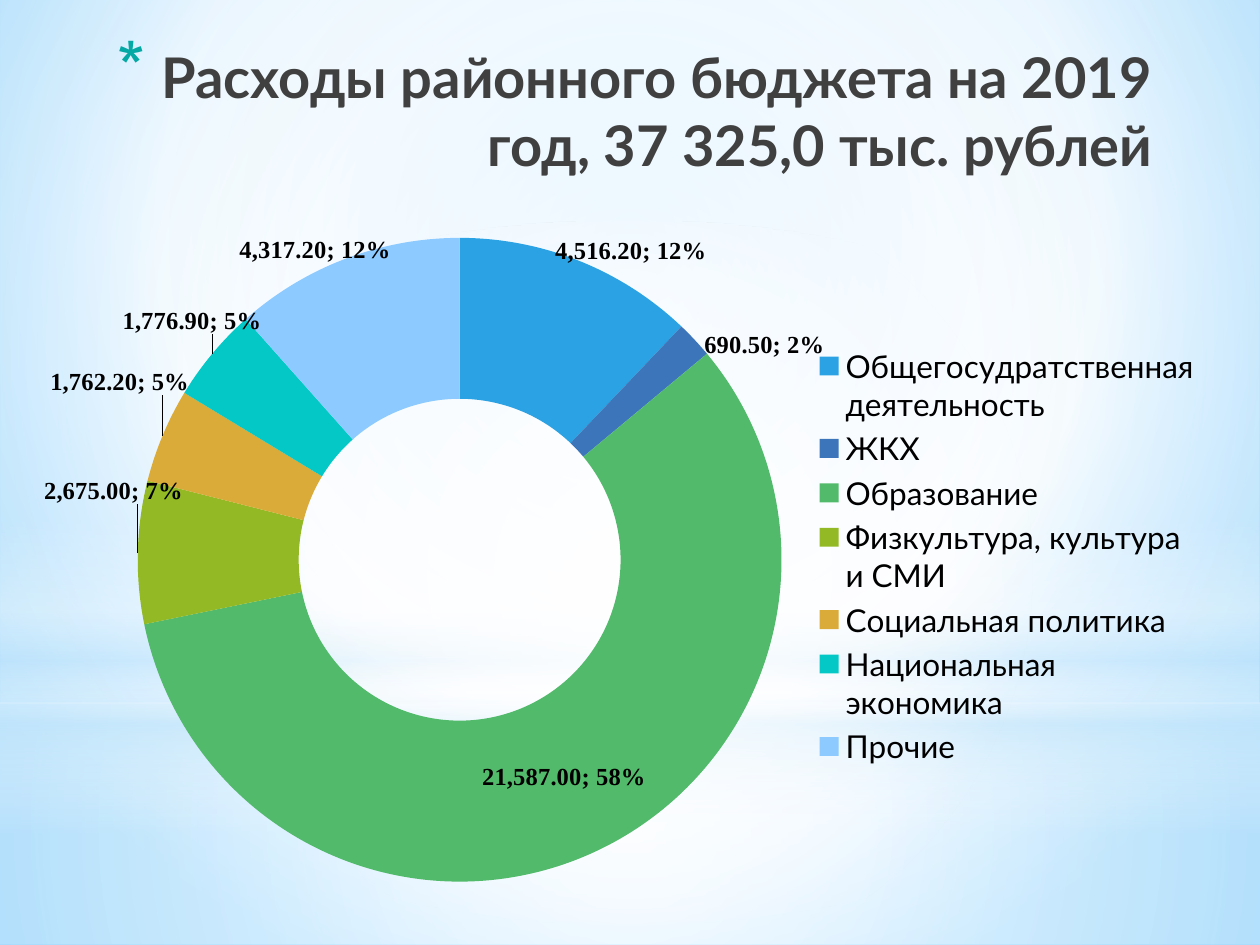
import copy
from dataclasses import dataclass

import pptx
import pptx.chart.data
import pptx.dml.color
import pptx.enum.chart
import pptx.enum.shapes
import pptx.enum.text
import pptx.oxml
import pptx.oxml.ns
import pptx.util
from pptx.util import Inches, Pt

MSO_SHAPE = pptx.enum.shapes.MSO_SHAPE
NS = {
    "a": "http://schemas.openxmlformats.org/drawingml/2006/main",
    "c": "http://schemas.openxmlformats.org/drawingml/2006/chart",
}
FONT, LABEL_FONT = "Lato", "Times New Roman"
CENTRE = (50, 50, 50, 50)


@dataclass
class Glow:
    """A background shape; stops are (position %, colour, opacity %)."""
    kind: int
    top: float
    height: float
    stops: list
    focus: tuple | None = CENTRE  # None gives a vertical linear gradient


@dataclass
class Expense:
    name: str
    value: float
    colour: str
    label_shift: tuple | None  # fractions of the chart's width and height


BACKGROUND = [(0, "B0E0FF", 100), (60, "FFFFFF", 100), (100, "6BC5FF", 100)]
GLOWS = [
    Glow(MSO_SHAPE.RECTANGLE, 5.58, 1.92,
         [(0, "FFFFFF", 91), (37, "FFFFFF", 76), (100, "C6E7FC", 79)]),
    Glow(MSO_SHAPE.RECTANGLE, 0, 5.58,
         [(0, "FFFFFF", 89), (48, "FFFFFF", 62), (100, "C6E7FC", 79)]),
    Glow(MSO_SHAPE.RECTANGLE, 4.12, 2.5,
         [(0, "FFFFFF", 0), (29, "FFFFFF", 30), (45, "C6E7FC", 40),
          (55, "FFFFFF", 26), (65, "C6E7FC", 60), (100, "FFFFFF", 0)], None),
    Glow(MSO_SHAPE.OVAL, 1.75, 5.58, [(0, "FFFFFF", 100), (56, "FFFFFF", 0)]),
]
EXPENSES = [
    Expense("Общегосудратственная деятельность", 4516.2, "2BA2E3", (0.07, -0.12)),
    Expense("ЖКХ", 690.5, "3D75BB", (0.11, -0.07)),
    Expense("Образование", 21587, "52BA6B", None),
    Expense("Физкультура, культура и СМИ", 2675, "93B924", (-0.09, -0.09)),
    Expense("Социальная политика", 1762.2, "DBAB39", (-0.1, -0.12)),
    Expense("Национальная экономика", 1776.9, "04C8C6", (-0.07, -0.12)),
    Expense("Прочие", 4317.2, "8CCAFF", (-0.05, -0.12)),
]


def rgb(colour: str):
    return pptx.dml.color.RGBColor.from_string(colour)


def xml(text: str):
    """Parse a fragment whose root tag is followed by a space."""
    uses = " ".join(f'xmlns:{k}="{v}"' for k, v in NS.items())
    return pptx.oxml.parse_xml(text.replace(" ", f" {uses} ", 1))


def set_gradient(fill, element, stops: list, focus: tuple | None) -> None:
    fill.solid()
    fill.fore_color.rgb = rgb("FFFFFF")
    gs = "".join(
        f'<a:gs pos="{pos * 1000}"><a:srgbClr val="{colour}">'
        f'<a:alpha val="{alpha * 1000}"/></a:srgbClr></a:gs>'
        for pos, colour, alpha in stops)
    if focus:
        sides = " ".join(f'{k}="{v * 1000}"' for k, v in zip("ltrb", focus))
        direction = f'<a:path path="circle"><a:fillToRect {sides}/></a:path>'
    else:
        direction = '<a:lin ang="5400000" scaled="0"/>'
    solid = element.find(".//a:solidFill", NS)
    solid.getparent().replace(solid, xml(
        f'<a:gradFill rotWithShape="1"><a:gsLst>{gs}</a:gsLst>{direction}</a:gradFill>'))


def add_glow(slide, glow: Glow) -> None:
    sp = slide.shapes.add_shape(
        glow.kind, 0, Inches(glow.top), Inches(10), Inches(glow.height))
    sp.shadow.inherit = False
    set_gradient(sp.fill, sp.element, glow.stops, glow.focus)
    sp.line.fill.background()


def format_title(title) -> None:
    title.left, title.top = Inches(0.67), Inches(0.29)
    title.width, title.height = Inches(8.58), Inches(1.25)
    tf = title.text_frame
    tf.text = "Расходы районного бюджета на 2019 год, 37 325,0 тыс. рублей"
    tf.word_wrap = True
    tf.auto_size = pptx.enum.text.MSO_AUTO_SIZE.NONE
    tf.vertical_anchor = pptx.enum.text.MSO_ANCHOR.TOP
    p = tf.paragraphs[0]
    p.alignment = pptx.enum.text.PP_ALIGN.RIGHT
    font = p.runs[0].font
    font.name, font.size, font.bold = FONT, Pt(32), True
    font.color.rgb = rgb("404040")
    pPr = p.runs[0]._r.getparent().get_or_add_pPr()
    pPr.set("marL", str(Inches(0.35)))
    pPr.set("indent", str(Inches(-0.35)))
    for part in ('<a:buClr ><a:srgbClr val="04A8A4"/></a:buClr>',
                 '<a:buSzPct val="128000"/>',
                 '<a:buFontTx />',
                 '<a:buChar char="*"/>'):
        pPr.append(xml(part))


def set_font(font, name: str, size: int, bold: bool = False) -> None:
    font.name, font.size, font.bold = name, Pt(size), bold
    font.color.rgb = rgb("000000")


def layout(x: float, y: float, extra: str = "", size: str = ""):
    return xml(f'<c:layout ><c:manualLayout>{extra}<c:x val="{x}"/>'
               f'<c:y val="{y}"/>{size}</c:manualLayout></c:layout>')


def shift_labels(dLbls) -> None:
    """Give moved labels their own offset and the shared label format."""
    shared = list(dLbls)
    moved = [(i, e.label_shift) for i, e in enumerate(EXPENSES) if e.label_shift]
    for place, (i, shift) in enumerate(moved):
        dLbl = xml(f'<c:dLbl ><c:idx val="{i}"/></c:dLbl>')
        dLbl.append(layout(*shift))
        for child in shared:
            if not child.tag.endswith("showLeaderLines"):
                dLbl.append(copy.deepcopy(child))
        dLbls.insert(place, dLbl)


def add_expense_chart(slide) -> None:
    data = pptx.chart.data.CategoryChartData(number_format="#,##0.00")
    data.categories = [e.name for e in EXPENSES]
    data.add_series("Series 1", [e.value for e in EXPENSES])
    chart = slide.shapes.add_chart(
        pptx.enum.chart.XL_CHART_TYPE.DOUGHNUT,
        Inches(0.35), Inches(1.62), Inches(9.29), Inches(5.59), data).chart
    chart.has_title = False
    set_font(chart.font, FONT, 18)
    chart.has_legend = True
    chart.legend.position = pptx.enum.chart.XL_LEGEND_POSITION.RIGHT
    chart.legend.include_in_layout = False
    set_font(chart.legend.font, FONT, 18)

    plot = chart.plots[0]
    plot.vary_by_categories = True
    series = plot.series[0]
    for i, expense in enumerate(EXPENSES):
        fill = series.points[i].format.fill
        fill.solid()
        fill.fore_color.rgb = rgb(expense.colour)

    labels = series.data_labels
    labels.show_value = labels.show_percentage = True
    set_font(labels.font, LABEL_FONT, 14, True)
    root = chart.element
    dLbls = root.find(".//c:ser/c:dLbls", NS)
    # Without a label format, values follow the data and shares stay percentages
    for tag in ("numFmt", "separator", "showBubbleSize"):
        for old in dLbls.findall(f"c:{tag}", NS):
            dLbls.remove(old)
    after = dLbls.find("c:showPercent", NS)
    after.addnext(xml('<c:separator >; </c:separator>'))
    after.addnext(xml('<c:showBubbleSize val="0"/>'))
    shift_labels(dLbls)

    root.find(".//c:holeSize", NS).set("val", "50")
    area = root.find(".//c:plotArea", NS)
    for old in area.findall("c:layout", NS):
        area.remove(old)
    area.insert(0, layout(
        0.08, 0.04,
        '<c:layoutTarget val="inner"/><c:xMode val="edge"/><c:yMode val="edge"/>',
        '<c:w val="0.55"/><c:h val="0.93"/>'))


def main() -> None:
    prs = pptx.Presentation()
    prs.slide_width, prs.slide_height = Inches(10), Inches(7.5)
    slide = prs.slides.add_slide(prs.slide_layouts[5])
    set_gradient(slide.background.fill, slide.element, BACKGROUND, (20, 10, 20, 60))
    for glow in GLOWS:
        add_glow(slide, glow)
    title = slide.shapes.title
    title.element.getparent().append(title.element)  # in front of the glows
    format_title(title)
    add_expense_chart(slide)
    prs.save("out.pptx")


if __name__ == "__main__":
    main()
